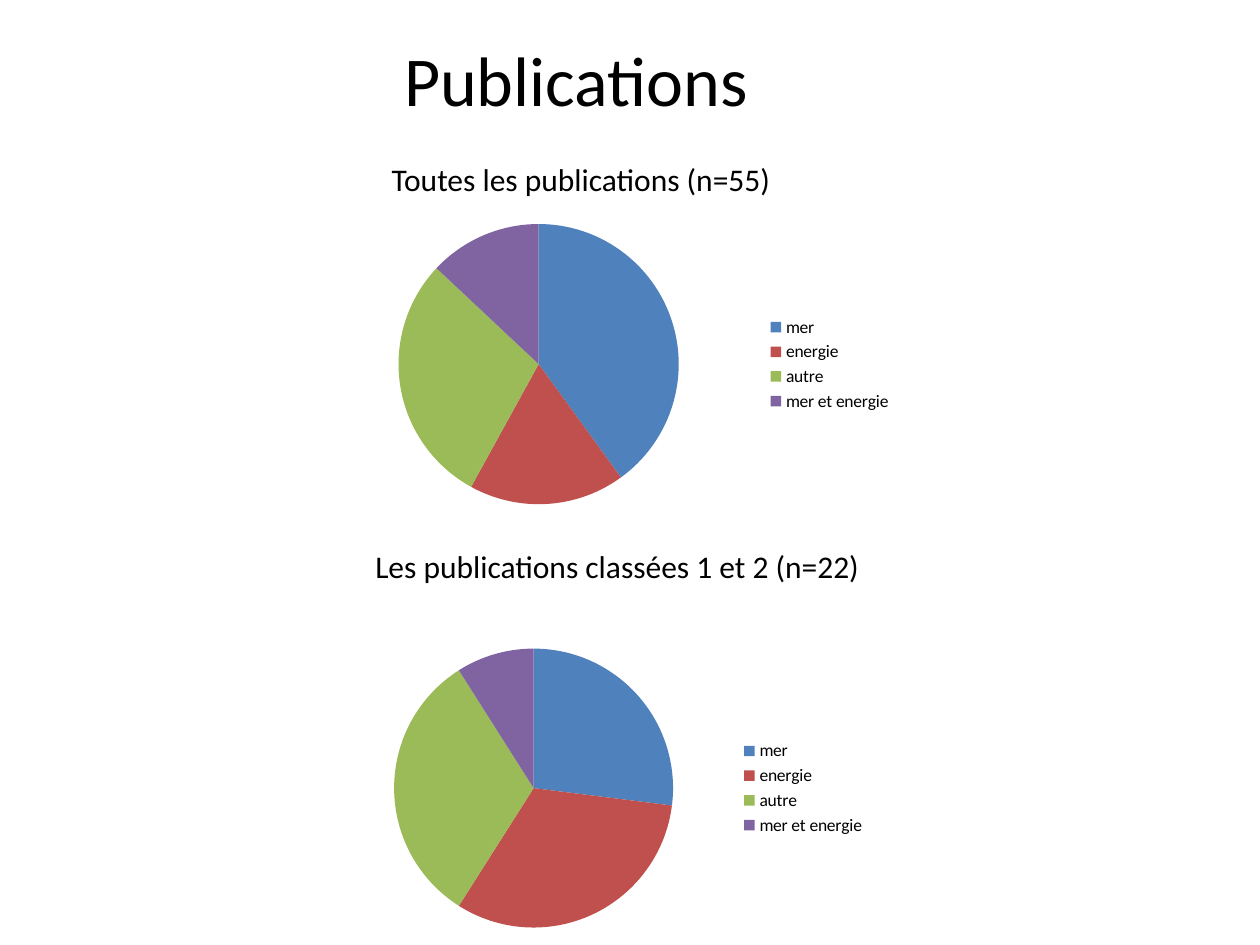
"""Build the Publications slide: two titled pie charts on a grid of 100 columns by 75 rows."""
from dataclasses import dataclass

import pptx
import pptx.chart.data
import pptx.dml.color
import pptx.enum.chart
import pptx.enum.text
import pptx.util


@dataclass(frozen=True)
class Theme:
    font: str = "Calibri"
    ink: str = "000000"
    fills: tuple[str, ...] = ("4F81BD", "C0504D", "9BBB59", "8064A2")
    title: int = 40
    head: int = 18
    key: int = 10


@dataclass(frozen=True)
class Box:
    col: float
    row: float
    cols: float
    rows: float


@dataclass(frozen=True)
class Panel:
    head: str
    label: Box
    chart: Box
    shares: tuple[int, ...]


THEME = Theme()
COLS, ROWS = 100, 75
TOPICS = ("mer", "energie", "autre", "mer et energie")
PANELS = (
    Panel("Toutes les publications (n=55)",
          Box(30.1, 12.2, 32.5, 4), Box(24.8, 16.4, 47, 25), (40, 18, 29, 13)),
    Panel("Les publications classées 1 et 2 (n=22)",
          Box(28.8, 42.9, 40.9, 4), Box(26.1, 50.1, 43.6, 24.9), (27, 32, 32, 9)),
)


def rgb(code: str) -> pptx.dml.color.RGBColor:
    return pptx.dml.color.RGBColor.from_string(code)


def place(deck, box: Box) -> tuple[int, ...]:
    wide, high = deck.slide_width / COLS, deck.slide_height / ROWS
    return (round(box.col * wide), round(box.row * high),
            round(box.cols * wide), round(box.rows * high))


def style(font, size: int) -> None:
    font.name = THEME.font
    font.size = pptx.util.Pt(size)
    font.color.rgb = rgb(THEME.ink)


def write(deck, slide, text: str, box: Box, *, size: int, wrap: bool) -> None:
    frame = slide.shapes.add_textbox(*place(deck, box)).text_frame
    frame.word_wrap = wrap
    frame.auto_size = pptx.enum.text.MSO_AUTO_SIZE.SHAPE_TO_FIT_TEXT
    run = frame.paragraphs[0].add_run()
    run.text = text
    style(run.font, size)


def pie(deck, slide, panel: Panel) -> None:
    data = pptx.chart.data.CategoryChartData()
    data.categories = TOPICS
    data.add_series("Publications", panel.shares)
    kind = pptx.enum.chart.XL_CHART_TYPE.PIE
    chart = slide.shapes.add_chart(kind, *place(deck, panel.chart), data).chart
    style(chart.font, THEME.key)
    chart.has_title = False
    chart.has_legend = True
    chart.legend.position = pptx.enum.chart.XL_LEGEND_POSITION.RIGHT
    chart.legend.include_in_layout = False
    plot = chart.plots[0]
    plot.vary_by_categories = True
    for spot, code in enumerate(THEME.fills):
        look = plot.series[0].points[spot].format
        look.fill.solid()
        look.fill.fore_color.rgb = rgb(code)
        look.line.fill.background()


def main() -> None:
    deck = pptx.Presentation()
    deck.slide_width = pptx.util.Inches(10)
    deck.slide_height = pptx.util.Inches(7.5)
    slide = deck.slides.add_slide(deck.slide_layouts[6])
    write(deck, slide, "Publications", Box(31.1, 2.4, 65.4, 7.7),
          size=THEME.title, wrap=True)
    for panel in PANELS:
        write(deck, slide, panel.head, panel.label, size=THEME.head, wrap=False)
        pie(deck, slide, panel)
    deck.save("out.pptx")


if __name__ == "__main__":
    main()
